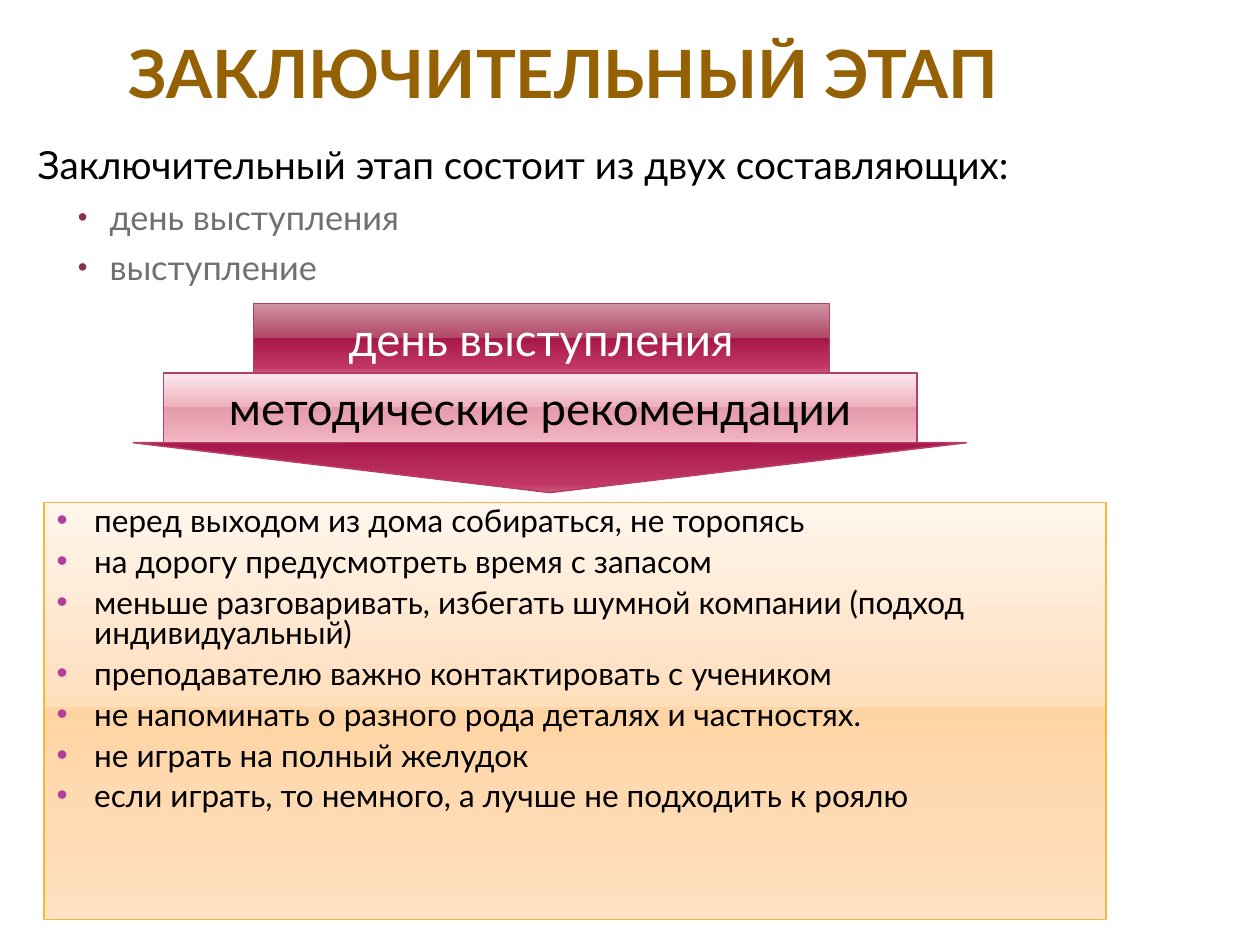
from lxml.etree import SubElement
from pptx import Presentation
from pptx.dml.color import RGBColor
from pptx.enum.shapes import MSO_SHAPE
from pptx.enum.text import MSO_ANCHOR, PP_ALIGN
from pptx.oxml.ns import qn
from pptx.util import Cm, Pt

FONT = "Lato"
BROWN = RGBColor(0x94, 0x62, 0x04)
BLACK = RGBColor(0, 0, 0)
WHITE = RGBColor(255, 255, 255)
GREY = RGBColor(0x70, 0x70, 0x70)
WINE = RGBColor(0x8A, 0x2E, 0x4E)
VIOLET = RGBColor(0xB1, 0x3F, 0x9A)
GOLD = RGBColor(0xF9, 0xB6, 0x39)
ROSE = RGBColor(0xB8, 0x3D, 0x68)

STOPS = (0, 49, 49, 92, 100)
PEACH = [RGBColor.from_string(c) for c in
         ("FFF6ED", "FFDEBC", "FFD4A4", "FFDEBC", "FFE3C7")]
DARK = [RGBColor.from_string(c) for c in
        ("CE94A2", "B34869", "A61749", "C13764", "CA5D7C")]
PINK = [RGBColor.from_string(c) for c in
        ("FCE8ED", "EFB0BE", "E39BAC", "EFB0BE", "F0BEC9")]

PARTS = ["день выступления", "выступление"]
TIPS = [
    "перед выходом из дома собираться, не торопясь",
    "на дорогу предусмотреть время с запасом",
    "меньше разговаривать, избегать шумной компании (подход индивидуальный)",
    "преподавателю важно контактировать с учеником",
    "не напоминать о разного рода деталях и частностях.",
    "не играть на полный желудок",
    "если играть, то немного, а лучше не подходить к роялю",
]


def style(para, size, color, bold=False):
    for run in para.runs:
        font = run.font
        font.name, font.size, font.bold = FONT, Pt(size), bold
        font.color.rgb = color


def bullet(para, left, hang, color, scale=100):
    props = para._p.get_or_add_pPr()
    props.set("marL", str(Cm(left)))
    props.set("indent", str(-Cm(hang)))
    tint = SubElement(props, qn("a:buClr"))
    SubElement(tint, qn("a:srgbClr"), val=str(color))
    SubElement(props, qn("a:buSzPct"), val=str(scale * 1000))
    SubElement(props, qn("a:buFont"), typeface="Arial")
    SubElement(props, qn("a:buChar"), char="•")


def glossy(slide, kind, box, colors, edge):
    """Add a shape with a vertical five-stop gradient."""
    shape = slide.shapes.add_shape(kind, *map(Cm, box))
    shape.shadow.inherit = False
    shape.fill.gradient()
    shape.fill.gradient_angle = 270
    stops = shape._element.spPr.find(".//" + qn("a:gsLst"))
    stops.clear()
    for place, color in zip(STOPS, colors):
        stop = SubElement(stops, qn("a:gs"), pos=str(place * 1000))
        SubElement(stop, qn("a:srgbClr"), val=str(color))
    shape.line.color.rgb = edge
    shape.line.width = Pt(0.9)
    return shape


def add_title(slide):
    title = slide.shapes.title
    title.left, title.top, title.width, title.height = map(
        Cm, (1.3, 0.33, 20.12, 1.93))
    frame = title.text_frame
    frame.text = "ЗАКЛЮЧИТЕЛЬНЫЙ ЭТАП"
    frame.vertical_anchor = MSO_ANCHOR.BOTTOM
    frame.margin_left = frame.margin_right = Cm(0.13)
    frame.margin_top = frame.margin_bottom = 0
    para = frame.paragraphs[0]
    para.alignment = PP_ALIGN.CENTER
    style(para, 38, BROWN, True)


def add_intro(slide):
    box = slide.shapes.add_textbox(Cm(0.51), Cm(2.72), Cm(20.7), Cm(3.2))
    frame = box.text_frame
    frame.word_wrap = True
    frame.text = "Заключительный этап состоит из двух составляющих:"
    style(frame.paragraphs[0], 22.1, BLACK)
    for part in PARTS:
        para = frame.add_paragraph()
        para.text = part
        para.level = 1
        bullet(para, 1.45, 0.64, WINE, 80)
        para.space_before = Pt(5)
        style(para, 19.6, GREY)


def add_tips(slide):
    box = glossy(slide, MSO_SHAPE.RECTANGLE, (0.89, 10.13, 21.41, 8.41),
                 PEACH, GOLD)
    frame = box.text_frame
    frame.vertical_anchor = MSO_ANCHOR.TOP
    frame.text = "\n".join(TIPS)
    for row, para in enumerate(frame.paragraphs):
        bullet(para, 0.76, 0.76, VIOLET)
        para.alignment = PP_ALIGN.LEFT
        para.line_spacing = 0.8
        para.space_before = Pt(6 if row else 0)
        style(para, 18, BLACK)


def add_band(slide, text, box, colors, ink):
    band = glossy(slide, MSO_SHAPE.RECTANGLE, box, colors, ROSE)
    frame = band.text_frame
    frame.text = text
    frame.vertical_anchor = MSO_ANCHOR.MIDDLE
    para = frame.paragraphs[0]
    para.alignment = PP_ALIGN.CENTER
    style(para, 26, ink)


def main():
    deck = Presentation()
    deck.slide_width, deck.slide_height = Cm(25.4), Cm(19.05)
    slide = deck.slides.add_slide(deck.slide_layouts[5])
    add_title(slide)
    add_intro(slide)
    add_tips(slide)
    glossy(slide, MSO_SHAPE.DOWN_ARROW, (2.69, 7.92, 16.79, 2.01), DARK, ROSE)
    add_band(slide, "день выступления", (5.11, 6.12, 11.61, 1.4), DARK, WHITE)
    add_band(slide, "методические рекомендации", (3.3, 7.52, 15.19, 1.4),
             PINK, BLACK)
    deck.save("out.pptx")


if __name__ == "__main__":
    main()
